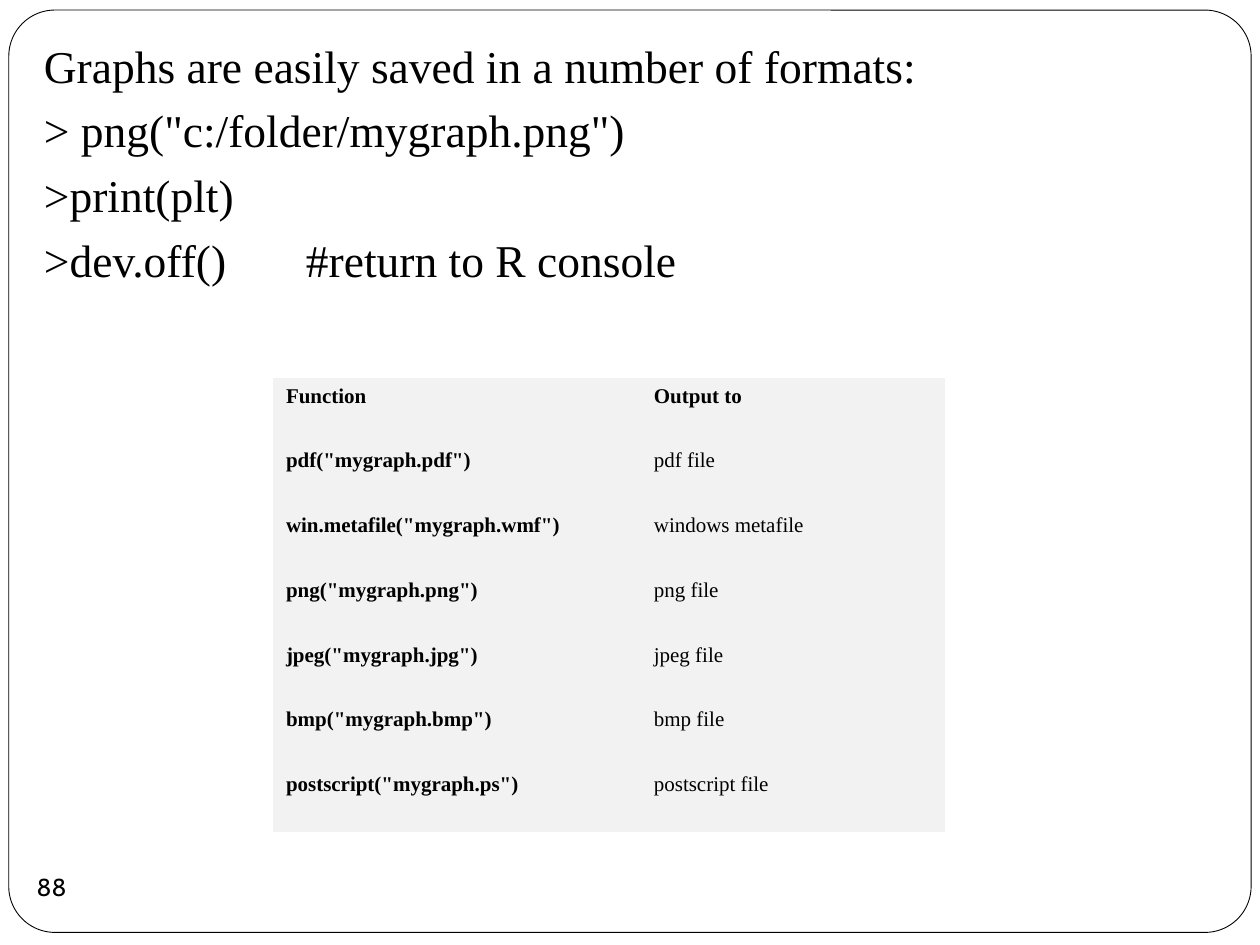
from typing import NamedTuple

from lxml.etree import SubElement
from pptx import Presentation
from pptx.dml.color import RGBColor
from pptx.enum.shapes import MSO_SHAPE
from pptx.enum.text import MSO_ANCHOR, PP_ALIGN
from pptx.oxml.ns import qn
from pptx.util import Inches, Pt

BLACK, WHITE, GREY = "000000", "FFFFFF", "F2F2F2"
SERIF = "Times New Roman"


class Output(NamedTuple):
    function: str
    target: str


LINES = [
    "Graphs are easily saved in a number of formats:",
    '> png("c:/folder/mygraph.png")',
    ">print(plt)",
    ">dev.off()\t#return to R console",
]
OUTPUTS = [
    Output("Function", "Output to"),
    Output('pdf("mygraph.pdf")', "pdf file"),
    Output('win.metafile("mygraph.wmf")', "windows metafile"),
    Output('png("mygraph.png")', "png file"),
    Output('jpeg("mygraph.jpg")', "jpeg file"),
    Output('bmp("mygraph.bmp")', "bmp file"),
    Output('postscript("mygraph.ps")', "postscript file"),
]


def rgb(color: str) -> RGBColor:
    return RGBColor.from_string(color)


def add_text(p, text: str, size: float, name: str = SERIF, bold: bool = False) -> None:
    r = p.add_run()
    r.text = text
    for key, value in {"size": Pt(size), "name": name, "bold": bold}.items():
        setattr(r.font, key, value)
    r.font.color.rgb = rgb(BLACK)


def add_tab_stop(p, position: int) -> None:
    tabs = SubElement(p._p.get_or_add_pPr(), qn("a:tabLst"))
    SubElement(tabs, qn("a:tab"), pos=str(position), algn="l")


def add_frame(s) -> None:
    sp = s.shapes.add_shape(MSO_SHAPE.ROUNDED_RECTANGLE, Inches(0.07), Inches(0.08),
                            Inches(9.86), Inches(7.32))
    sp.shadow.inherit = False
    sp.adjustments[0] = 0.05
    sp.fill.solid()
    sp.fill.fore_color.rgb = rgb(WHITE)
    sp.line.color.rgb = rgb(BLACK)
    sp.line.width = Pt(0.5)


def add_page_number(s, number: str) -> None:
    sp = s.shapes.add_shape(MSO_SHAPE.OVAL, Inches(0.16), Inches(6.79),
                            Inches(0.5), Inches(0.5))
    sp.shadow.inherit = False
    sp.fill.background()
    sp.line.fill.background()
    tf = sp.text_frame
    layout = {"margin_left": 0, "margin_right": 0, "margin_top": 0, "margin_bottom": 0,
              "word_wrap": False, "vertical_anchor": MSO_ANCHOR.MIDDLE}
    for key, value in layout.items():
        setattr(tf, key, value)
    p = tf.paragraphs[0]
    p.alignment = PP_ALIGN.CENTER
    add_text(p, number, 14, "Cabin")


def add_body(s, lines: list[str]) -> None:
    tf = s.shapes.add_textbox(Inches(0.25), Inches(0.25),
                              Inches(9.75), Inches(6.08)).text_frame
    tf.word_wrap = True
    for i, line in enumerate(lines):
        p = tf.add_paragraph() if i else tf.paragraphs[0]
        if i:
            p.space_before = Pt(5.8)
        if "\t" in line:
            add_tab_stop(p, Inches(2.08))
        add_text(p, line, 26)


def add_output_table(s, outputs: list[Output]) -> None:
    table = s.shapes.add_table(len(outputs), 2, Inches(2.17), Inches(3),
                               Inches(5.33), Inches(3.6)).table
    for column, width in zip(table.columns, (2.92, 2.41)):
        column.width = Inches(width)
    for i, output in enumerate(outputs):
        for j, text in enumerate(output):
            cell = table.cell(i, j)
            cell.fill.solid()
            cell.fill.fore_color.rgb = rgb(GREY)
            # Header row and function column are bold
            add_text(cell.text_frame.paragraphs[0], text, 12, bold=i == 0 or j == 0)
    # No banding or borders from the default style
    table.first_row = table.horz_banding = False
    style = table._tbl.tblPr.find(qn("a:tableStyleId"))
    style.text = "{2D5ABB26-0587-4C30-8999-92F81FD0307C}"


def main() -> None:
    prs = Presentation()
    prs.slide_width, prs.slide_height = Inches(10), Inches(7.5)
    s = prs.slides.add_slide(prs.slide_layouts[6])

    # Frame and page number
    add_frame(s)
    add_page_number(s, "88")

    # Commands and output formats
    add_body(s, LINES)
    add_output_table(s, OUTPUTS)
    prs.save("out.pptx")


if __name__ == "__main__":
    main()
